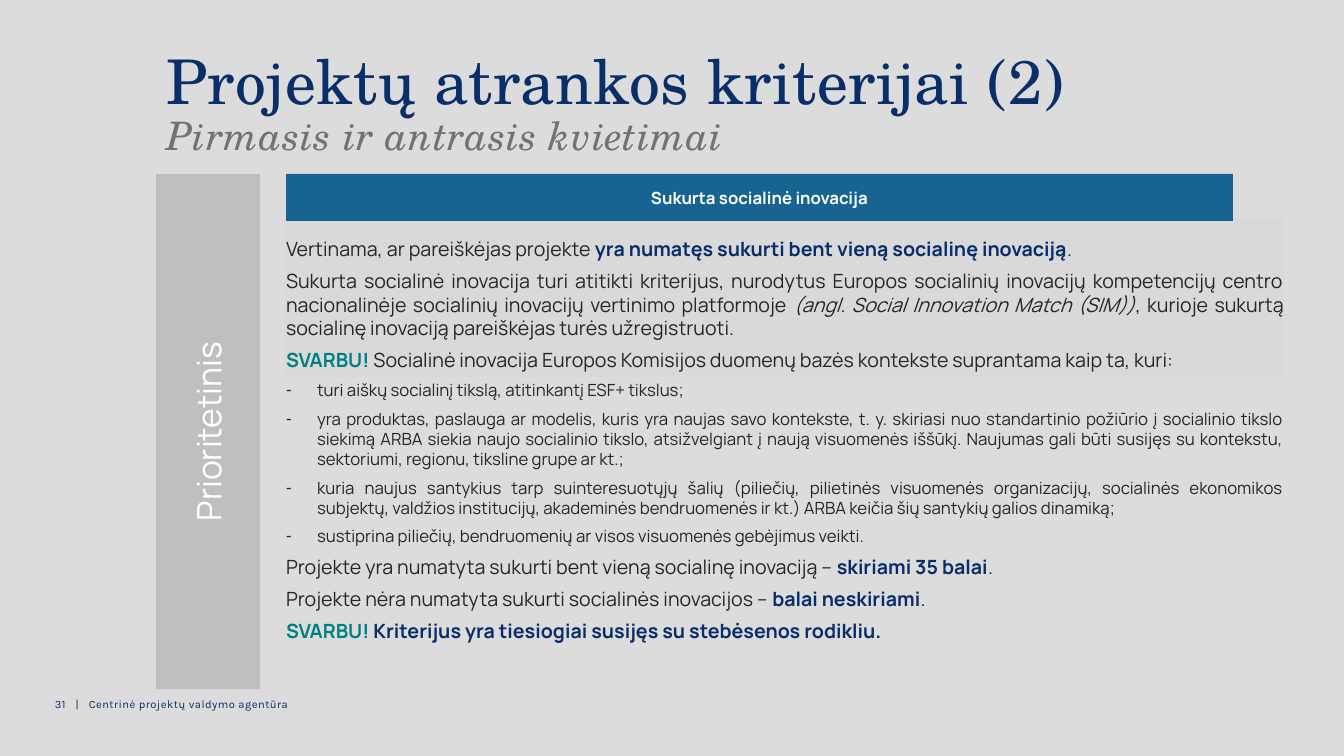
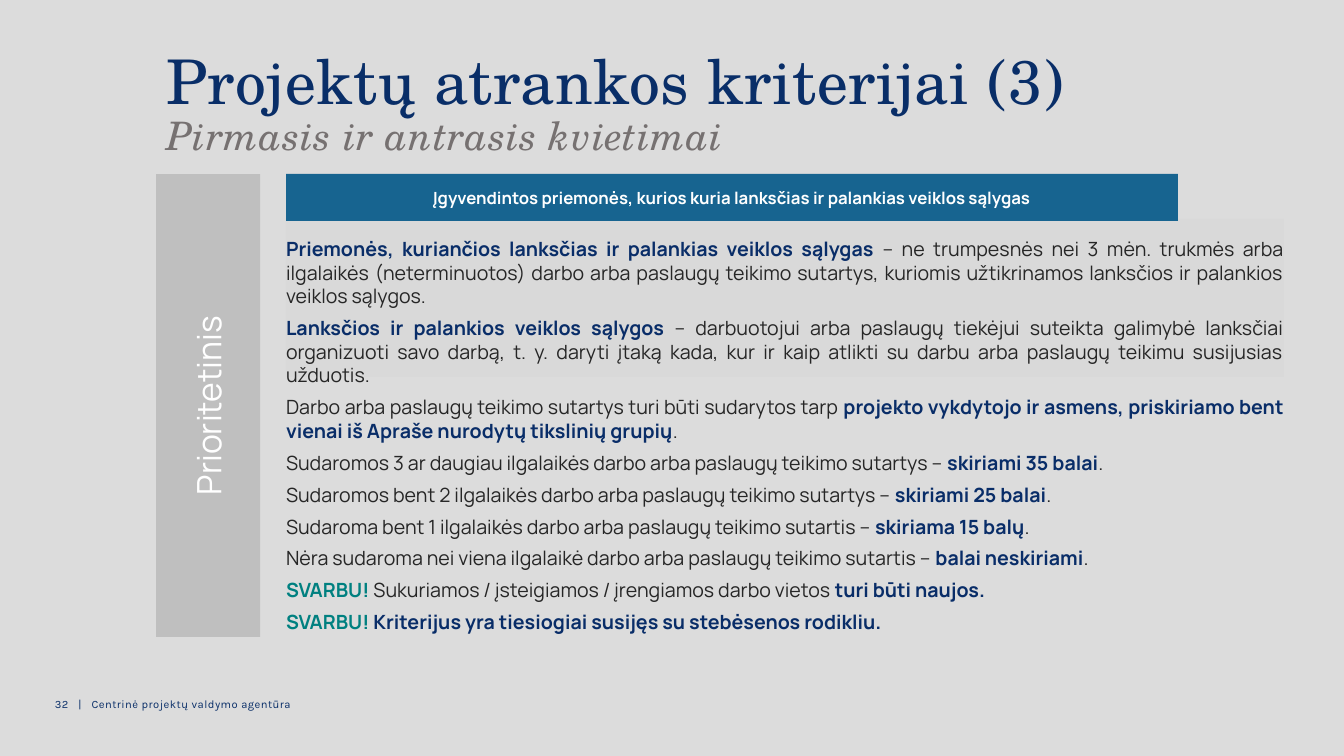
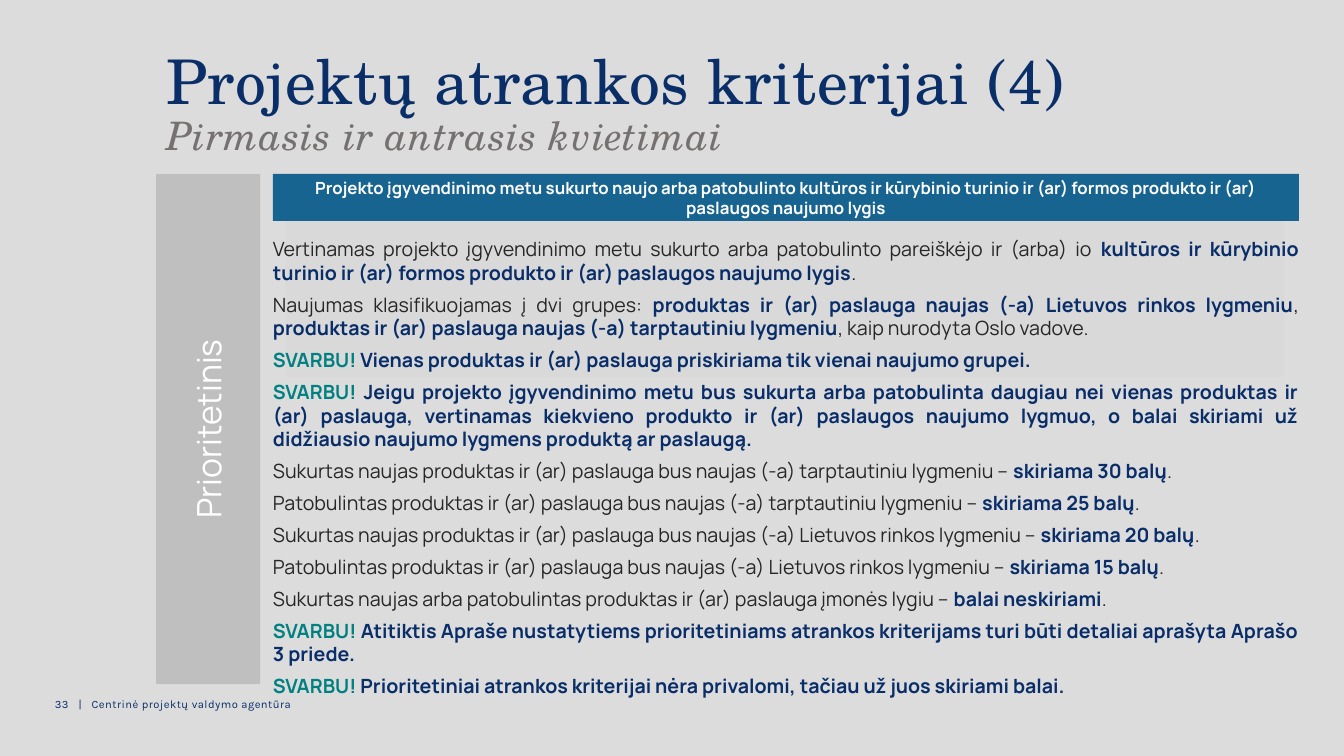
from lxml import etree
from pptx import Presentation
from pptx.dml.color import RGBColor
from pptx.enum.shapes import MSO_SHAPE
from pptx.enum.text import MSO_ANCHOR, MSO_AUTO_SIZE, PP_ALIGN
from pptx.oxml.ns import qn
from pptx.util import Pt

RECTANGLE = MSO_SHAPE.RECTANGLE
TOP, MIDDLE = MSO_ANCHOR.TOP, MSO_ANCHOR.MIDDLE
LEFT, CENTER, JUSTIFY = PP_ALIGN.LEFT, PP_ALIGN.CENTER, PP_ALIGN.JUSTIFY
FIXED_SIZE = MSO_AUTO_SIZE.NONE

SLIDE_WIDTH, SLIDE_HEIGHT = 1344, 756
EMU_PER_PX = 12192000 / SLIDE_WIDTH

COLORS = {
    "background": "DCDCDC", "panel": "D9D9D9", "side": "BFBFBF", "band": "176490",
    "white": "FFFFFF", "text": "262626", "key": "092D68", "title": "092E68",
    "subtitle": "767171", "alert": "008080",
}
SERIF, SANS, FOOTER_FONT = "TeX Gyre Schola", "Manrope", "Karla"

TITLE_BOX = (156, 52, 1129, 108)
FOOTER_BOX = (45, 692, 323, 40)
PANEL_BOX = (286, 219, 998, 158)
SIDE_LEFT, SIDE_WIDTH = 156, 104
BAND_TOP, BAND_HEIGHT = 174, 47
BODY_TOP = 237
BULLET_INDENT = 31

TITLE = "Projektų atrankos kriterijai"
SUBTITLE = "Pirmasis ir antrasis kvietimai"
SIDE_LABEL = "Prioritetinis"
AGENCY = "Centrinė projektų valdymo agentūra"


def key(text):
    return text, {"color": "key", "bold": True}


def term(text):
    return text, {"italic": True}


def plain(text):
    return text, {}


def score(condition, points):
    return [plain(f"{condition} – "), key(points), plain(".")]


ALERT = ("SVARBU! ", {"color": "alert", "bold": True})
INDICATOR_ALERT = [ALERT, key("Kriterijus yra tiesiogiai susijęs su stebėsenos rodikliu.")]

# A body entry that is a plain string is a dash item; a list of runs is a paragraph.
SLIDES = [
    {
        "part": 2, "number": 31, "side_height": 515,
        "left": 286, "band_width": 947, "body_width": 998, "body_height": 429,
        "band": "Sukurta socialinė inovacija",
        "body": [
            [plain("Vertinama, ar pareiškėjas projekte "),
             key("yra numatęs sukurti bent vieną socialinę inovaciją"), plain(".")],
            [plain("Sukurta socialinė inovacija turi atitikti kriterijus, nurodytus Europos "
                   "socialinių inovacijų kompetencijų centro nacionalinėje socialinių inovacijų "
                   "vertinimo platformoje "),
             term("(angl. Social Innovation Match (SIM))"),
             plain(", kurioje sukurtą socialinę inovaciją pareiškėjas turės užregistruoti.")],
            [ALERT, plain("Socialinė inovacija Europos Komisijos duomenų bazės kontekste "
                          "suprantama kaip ta, kuri:")],
            "turi aiškų socialinį tikslą, atitinkantį ESF+ tikslus;",
            "yra produktas, paslauga ar modelis, kuris yra naujas savo kontekste, t. y. skiriasi "
            "nuo standartinio požiūrio į socialinio tikslo siekimą ARBA siekia naujo socialinio "
            "tikslo, atsižvelgiant į naują visuomenės iššūkį. Naujumas gali būti susijęs su "
            "kontekstu, sektoriumi, regionu, tiksline grupe ar kt.;",
            "kuria naujus santykius tarp suinteresuotųjų šalių (piliečių, pilietinės visuomenės "
            "organizacijų, socialinės ekonomikos subjektų, valdžios institucijų, akademinės "
            "bendruomenės ir kt.) ARBA keičia šių santykių galios dinamiką;",
            "sustiprina piliečių, bendruomenių ar visos visuomenės gebėjimus veikti.",
            score("Projekte yra numatyta sukurti bent vieną socialinę inovaciją",
                  "skiriami 35 balai"),
            score("Projekte nėra numatyta sukurti socialinės inovacijos", "balai neskiriami"),
            INDICATOR_ALERT,
        ],
    },
    {
        "part": 3, "number": 32, "side_height": 463,
        "left": 286, "band_width": 892, "body_width": 998, "body_height": 400,
        "band": "Įgyvendintos priemonės, kurios kuria lanksčias ir palankias veiklos sąlygas",
        "body": [
            [key("Priemonės, kuriančios lanksčias ir palankias veiklos sąlygas "),
             plain("– ne trumpesnės nei 3 mėn. trukmės arba ilgalaikės (neterminuotos) darbo arba "
                   "paslaugų teikimo sutartys, kuriomis užtikrinamos lanksčios ir palankios "
                   "veiklos sąlygos.")],
            [key("Lanksčios ir palankios veiklos sąlygos "),
             plain("– darbuotojui arba paslaugų tiekėjui suteikta galimybė lanksčiai organizuoti "
                   "savo darbą, t. y. daryti įtaką kada, kur ir kaip atlikti su darbu arba "
                   "paslaugų teikimu susijusias užduotis.")],
            [plain("Darbo arba paslaugų teikimo sutartys turi būti sudarytos tarp "),
             key("projekto vykdytojo ir asmens, priskiriamo bent vienai iš Apraše nurodytų "
                 "tikslinių grupių"), plain(".")],
            score("Sudaromos 3 ar daugiau ilgalaikės darbo arba paslaugų teikimo sutartys",
                  "skiriami 35 balai"),
            score("Sudaromos bent 2 ilgalaikės darbo arba paslaugų teikimo sutartys",
                  "skiriami 25 balai"),
            score("Sudaroma bent 1 ilgalaikės darbo arba paslaugų teikimo sutartis",
                  "skiriama 15 balų"),
            score("Nėra sudaroma nei viena ilgalaikė darbo arba paslaugų teikimo sutartis",
                  "balai neskiriami"),
            [ALERT, plain("Sukuriamos / įsteigiamos / įrengiamos darbo vietos "),
             key("turi būti naujos.")],
            INDICATOR_ALERT,
        ],
    },
    {
        "part": 4, "number": 33, "side_height": 510,
        "left": 273, "band_width": 1026, "body_width": 1026, "body_height": 465,
        "band": "Projekto įgyvendinimo metu sukurto naujo arba patobulinto kultūros ir kūrybinio "
                "turinio ir (ar) formos produkto ir (ar) paslaugos naujumo lygis",
        "body": [
            [plain("Vertinamas projekto įgyvendinimo metu sukurto arba patobulinto pareiškėjo ir "
                   "(arba) io "),
             key("kultūros ir kūrybinio turinio ir (ar) formos produkto ir (ar) paslaugos "
                 "naujumo lygis"), plain(".")],
            [plain("Naujumas klasifikuojamas į dvi grupes: "),
             key("produktas ir (ar) paslauga naujas (-a) Lietuvos rinkos lygmeniu"), plain(", "),
             key("produktas ir (ar) paslauga naujas (-a) tarptautiniu lygmeniu"),
             plain(", kaip nurodyta Oslo vadove.")],
            [ALERT, key("Vienas produktas ir (ar) paslauga priskiriama tik vienai naujumo "
                        "grupei.")],
            [ALERT, key("Jeigu projekto įgyvendinimo metu bus sukurta arba patobulinta daugiau "
                        "nei vienas produktas ir (ar) paslauga, vertinamas kiekvieno produkto ir "
                        "(ar) paslaugos naujumo lygmuo, o balai skiriami už didžiausio naujumo "
                        "lygmens produktą ar paslaugą.")],
            score("Sukurtas naujas produktas ir (ar) paslauga bus naujas (-a) tarptautiniu "
                  "lygmeniu", "skiriama 30 balų"),
            score("Patobulintas produktas ir (ar) paslauga bus naujas (-a) tarptautiniu "
                  "lygmeniu", "skiriama 25 balų"),
            score("Sukurtas naujas produktas ir (ar) paslauga bus naujas (-a) Lietuvos rinkos "
                  "lygmeniu", "skiriama 20 balų"),
            score("Patobulintas produktas ir (ar) paslauga bus naujas (-a) Lietuvos rinkos "
                  "lygmeniu", "skiriama 15 balų"),
            score("Sukurtas naujas arba patobulintas produktas ir (ar) paslauga įmonės lygiu",
                  "balai neskiriami"),
            [ALERT, key("Atitiktis Apraše nustatytiems prioritetiniams atrankos kriterijams turi "
                        "būti detaliai aprašyta Aprašo 3 priede.")],
            [ALERT, key("Prioritetiniai atrankos kriterijai nėra privalomi, tačiau už juos "
                        "skiriami balai.")],
        ],
    },
]


def px(length):
    return round(length * EMU_PER_PX)


def rgb(name):
    return RGBColor.from_string(COLORS[name])


def write(frame, runs, *, align=LEFT, after=0, line_spacing=1.0, bullet=None, **base):
    """Add one paragraph; each run is (text, changes to the base format)."""
    first = frame.paragraphs[0]
    paragraph = frame.add_paragraph() if first.runs else first
    paragraph.alignment = align
    paragraph.line_spacing = line_spacing
    paragraph.space_before, paragraph.space_after = Pt(0), Pt(after)
    properties = paragraph._p.get_or_add_pPr()
    indent = px(BULLET_INDENT) if bullet else 0
    properties.set("marL", str(indent))
    properties.set("indent", str(-indent))
    if bullet:
        etree.SubElement(properties, qn("a:buChar")).set("char", bullet)
    else:
        etree.SubElement(properties, qn("a:buNone"))
    for text, changes in [plain(runs)] if isinstance(runs, str) else runs:
        style = {"bold": False, "italic": False, "spacing": 0, **base, **changes}
        run = paragraph.add_run()
        run.text = text
        font = run.font
        font.name, font.size = style["font"], Pt(style["size"])
        font.bold, font.italic = style["bold"], style["italic"]
        font.color.rgb = rgb(style["color"])
        if style["spacing"]:
            run._r.get_or_add_rPr().set("spc", str(round(style["spacing"] * 100)))


def add_block(slide, box, fill):
    block = slide.shapes.add_shape(RECTANGLE, *map(px, box))
    block.shadow.inherit = False
    block.fill.solid()
    block.fill.fore_color.rgb = rgb(fill)
    block.line.fill.background()
    block.text_frame.word_wrap = True
    block.text_frame.vertical_anchor = MIDDLE
    return block


def place(slide, placeholder, box):
    """Move a placeholder to its box, in front of the blocks."""
    placeholder.left, placeholder.top, placeholder.width, placeholder.height = map(px, box)
    slide.shapes._spTree.append(placeholder._element)
    frame = placeholder.text_frame
    frame.word_wrap = True
    frame.auto_size = FIXED_SIZE
    frame.vertical_anchor = TOP
    return frame


def add_title(slide, part):
    frame = place(slide, slide.shapes.title, TITLE_BOX)
    shared = {"font": SERIF, "spacing": 0.4, "line_spacing": 0.8, "after": 3}
    write(frame, f"{TITLE} ({part})", size=44, color="title", **shared)
    write(frame, SUBTITLE, size=28, color="subtitle", italic=True, **shared)


def add_body(slide, content):
    box = content["left"], BODY_TOP, content["body_width"], content["body_height"]
    frame = place(slide, slide.placeholders[1], box)
    frame.margin_left = frame.margin_top = frame.margin_right = frame.margin_bottom = 0
    for entry in content["body"]:
        is_item = isinstance(entry, str)
        write(frame, entry, font=SANS, size=12 if is_item else 14, color="text",
              align=JUSTIFY, after=6, bullet="-" if is_item else None)


def add_footer(slide, number):
    frame = slide.shapes.add_textbox(*map(px, FOOTER_BOX)).text_frame
    frame.word_wrap = True
    gap = (" ", {"spacing": 4.9})
    write(frame, [plain(str(number)), gap, plain("|"), gap, plain(AGENCY)],
          font=FOOTER_FONT, size=8, color="title", spacing=0.3)


def build_slide(deck, content):
    slide = deck.slides.add_slide(deck.slide_layouts[1])
    add_block(slide, PANEL_BOX, "panel")
    band = add_block(
        slide, (content["left"], BAND_TOP, content["band_width"], BAND_HEIGHT), "band")
    write(band.text_frame, content["band"], font=SANS, size=12, color="white", bold=True,
          align=CENTER)
    side = add_block(slide, (SIDE_LEFT, BAND_TOP, SIDE_WIDTH, content["side_height"]), "side")
    side.rotation = 180
    side.text_frame._txBody.bodyPr.set("vert", "vert")
    write(side.text_frame, SIDE_LABEL, font=SANS, size=24, color="white", align=CENTER)
    add_body(slide, content)
    add_title(slide, content["part"])
    add_footer(slide, content["number"])


def main():
    deck = Presentation()
    deck.slide_width, deck.slide_height = px(SLIDE_WIDTH), px(SLIDE_HEIGHT)
    background = deck.slide_master.background.fill
    background.solid()
    background.fore_color.rgb = rgb("background")
    for content in SLIDES:
        build_slide(deck, content)
    deck.save("out.pptx")


if __name__ == "__main__":
    main()
